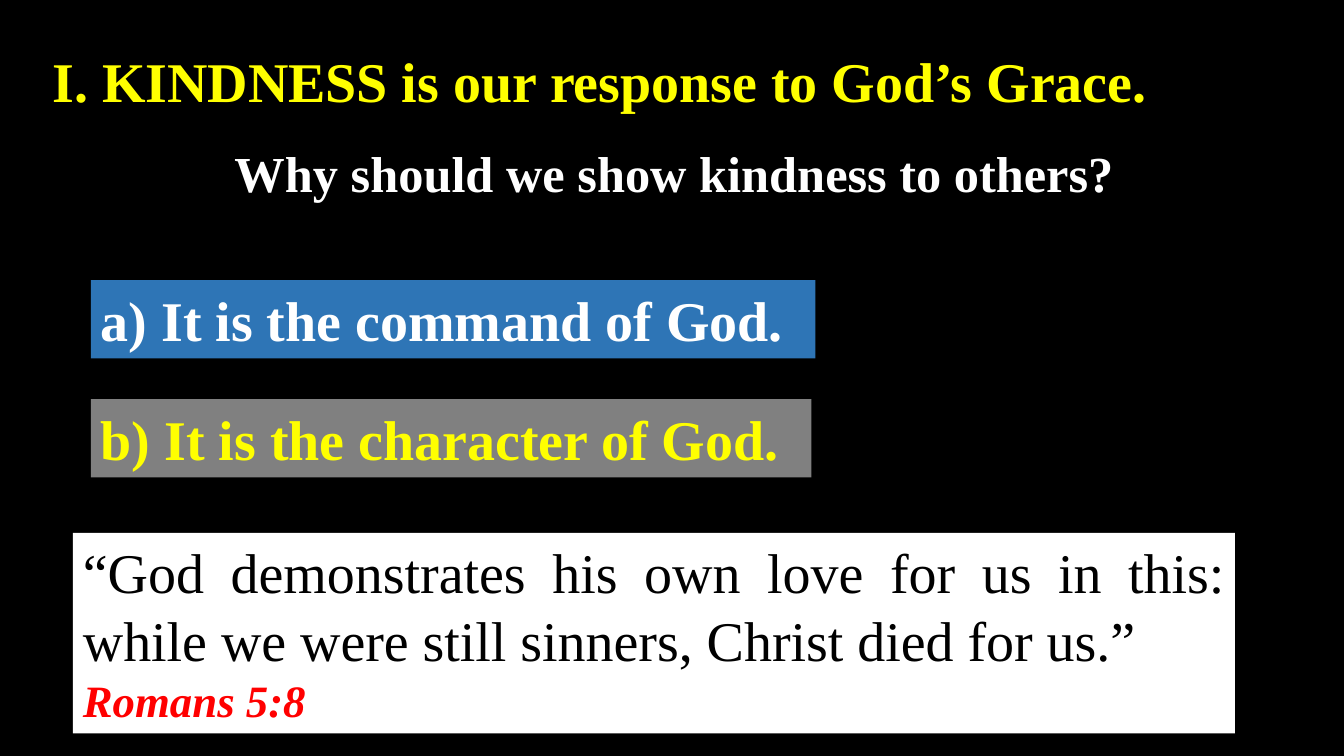
from pptx import Presentation
from pptx import util as u
from pptx.dml.color import RGBColor
from pptx.enum import text

FONT = "Times New Roman"
BLACK, WHITE, YELLOW, RED = "000000", "FFFFFF", "FFFF00", "FF0000"
BLUE, GREY = "2E75B6", "808080"


def colour(value):
    return RGBColor.from_string(value)


def add_box(page, left, top, width, height, fill=None, wrap=True):
    """Add a text box, measured in centimetres, with an optional solid fill."""
    box = page.shapes.add_textbox(u.Cm(left), u.Cm(top), u.Cm(width), u.Cm(height))
    box.text_frame.word_wrap = wrap
    if fill:
        box.fill.solid()
        box.fill.fore_color.rgb = colour(fill)
    return box


def write(para, words, size, ink, bold=True, italic=False, align=text.PP_ALIGN.LEFT):
    para.text = words
    para.alignment = align
    for span in para.runs:
        span.font.name = FONT
        span.font.size = u.Pt(size)
        span.font.bold = bold
        span.font.italic = italic
        span.font.color.rgb = colour(ink)


def add_line(page, place, words, size, ink, fill=None, wrap=False):
    box = add_box(page, *place, fill, wrap)
    write(box.text_frame.paragraphs[0], words, size, ink)


def add_verse(page, place, words, reference):
    frame = add_box(page, *place, WHITE).text_frame
    justify = text.PP_ALIGN.JUSTIFY
    write(frame.paragraphs[0], words, 40, BLACK, bold=False, align=justify)
    write(frame.add_paragraph(), reference, 32, RED, italic=True, align=justify)


def main():
    deck = Presentation()
    deck.slide_width, deck.slide_height = u.Cm(33.87), u.Cm(19.05)
    page = deck.slides.add_slide(deck.slide_layouts[6])
    page.background.fill.solid()
    page.background.fill.fore_color.rgb = colour(BLACK)

    add_verse(page, (1.84, 13.43, 29.28, 5.05),
              "“God demonstrates his own love for us in this: "
              "while we were still sinners, Christ died for us.”",
              "Romans 5:8")
    add_line(page, (1.07, 1.04, 32.39, 1.97),
             "I. KINDNESS is our response to God’s Grace.", 40, YELLOW, wrap=True)
    add_line(page, (5.66, 3.45, 23.22, 1.8),
             "Why should we show kindness to others?", 36, WHITE)
    add_line(page, (2.29, 7.06, 18.26, 1.97),
             "a) It is the command of God.", 40, WHITE, BLUE)
    add_line(page, (2.29, 10.06, 18.16, 1.97),
             "b) It is the character of God.", 40, YELLOW, GREY)

    deck.save("out.pptx")


if __name__ == "__main__":
    main()
